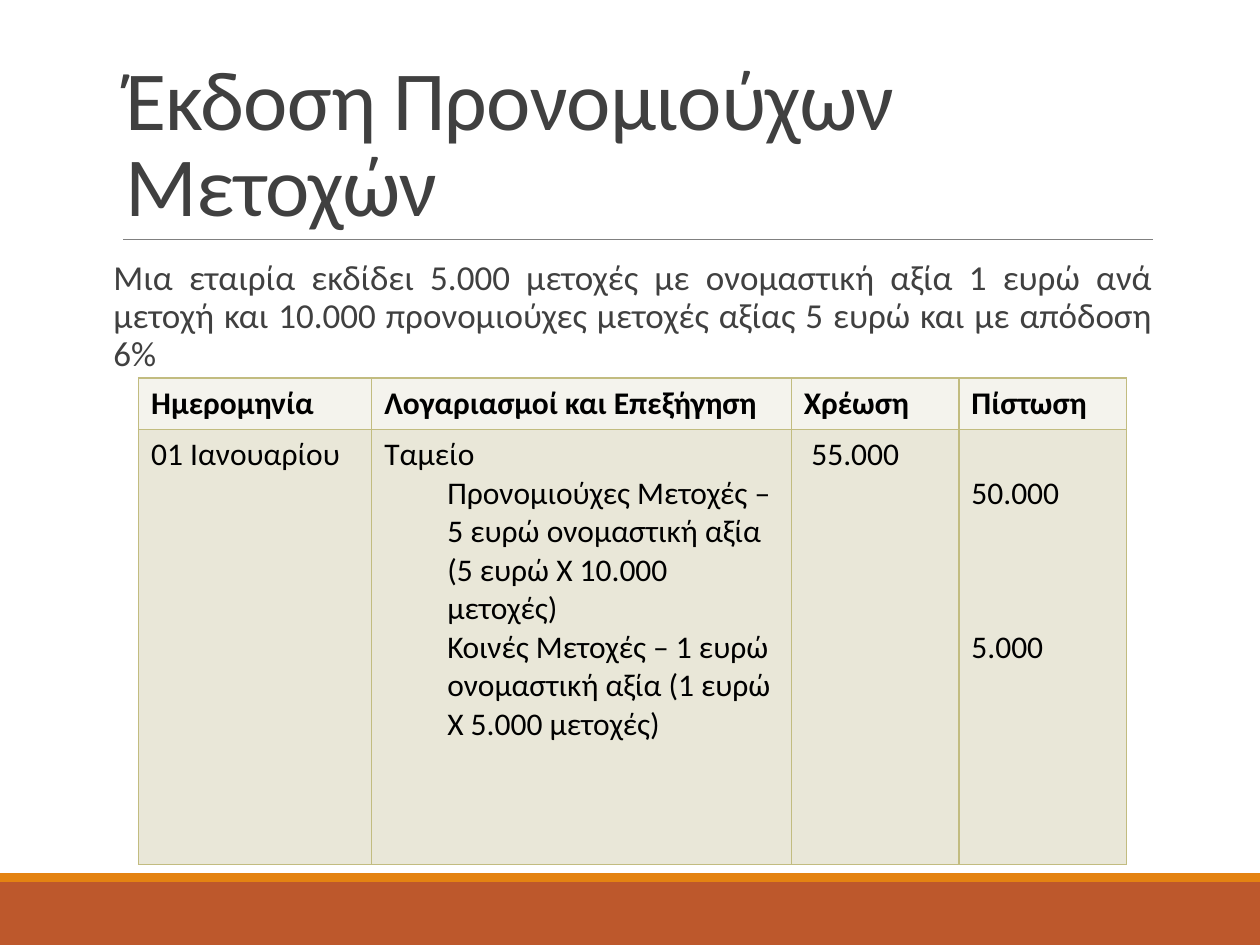
from lxml import etree
from pptx import Presentation
from pptx import util as u
from pptx.dml.color import RGBColor
from pptx.enum import shapes, text
from pptx.oxml.ns import qn

In = u.Inches
GREY, BLACK, EDGE = "404040", "000000", "C2BC80"


def color(code):
    return RGBColor.from_string(code)


def write(par, words, size=18, ink=BLACK, bold=False, align=None,
          line=None, before=0, after=0, track=None):
    """Put formatted words into a paragraph."""
    par.alignment = align
    par.line_spacing = line
    par.space_before, par.space_after = u.Pt(before), u.Pt(after)
    run = par.add_run()
    run.text = words
    font = run.font
    font.name, font.size, font.bold = "Calibri", u.Pt(size), bold
    font.color.rgb = color(ink)
    if track is not None:
        run._r.get_or_add_rPr().set("spc", str(int(track * 100)))


def label(slide, box, words, side=0.1, anchor=text.MSO_ANCHOR.TOP, **look):
    frame = slide.shapes.add_textbox(*map(In, box)).text_frame
    frame.word_wrap = True
    frame.vertical_anchor = anchor
    frame.margin_left = frame.margin_right = In(side)
    write(frame.paragraphs[0], words, **look)


def band(slide, box, fill):
    bar = slide.shapes.add_shape(shapes.MSO_SHAPE.RECTANGLE, *map(In, box))
    bar.shadow.inherit = False
    bar.fill.solid()
    bar.fill.fore_color.rgb = color(fill)
    bar.line.fill.background()


def rule(slide, left, right, top):
    line = slide.shapes.add_connector(
        shapes.MSO_CONNECTOR.STRAIGHT, In(left), In(top), In(right), In(top))
    line.line.color.rgb = color("808080")
    line.line.width = u.Pt(0.5)
    etree.SubElement(line._element.spPr, qn("a:effectLst"))


def paint(cell, fill):
    """Draw the cell borders, then fill the cell."""
    props = cell._tc.get_or_add_tcPr()
    for side in ("lnL", "lnR", "lnT", "lnB"):
        edge = etree.SubElement(props, qn("a:" + side), w=str(u.Pt(1)))
        solid = etree.SubElement(edge, qn("a:solidFill"))
        etree.SubElement(solid, qn("a:srgbClr"), val=EDGE)
    cell.fill.solid()
    cell.fill.fore_color.rgb = color(fill)


def ledger(slide, box):
    """Journal entry: each body cell lists (words, indent, space before)."""
    heads = ["Ημερομηνία", "Λογαριασμοί και Επεξήγηση", "Χρέωση", "Πίστωση"]
    entry = [
        [("01 Ιανουαρίου", 0, 0)],
        [("Ταμείο", 0, 0),
         ("Προνομιούχες Μετοχές – 5 ευρώ ονομαστική αξία "
          "(5 ευρώ Χ 10.000 μετοχές)", 0.5, 0),
         ("Κοινές Μετοχές – 1 ευρώ ονομαστική αξία "
          "(1 ευρώ Χ 5.000 μετοχές)", 0.5, 0)],
        [("55.000", 0, 0)],
        [("50.000", 0, 0), ("5.000", 0, 66)],
    ]
    grid = slide.shapes.add_table(2, 4, *map(In, box)).table
    for col, wide in zip(grid.columns, (1.85, 3.33, 1.33, 1.33)):
        col.width = In(wide)
    for row, high in zip(grid.rows, (0.41, box[3] - 0.41)):
        row.height = In(high)

    for i, (head, parts) in enumerate(zip(heads, entry)):
        top, body = grid.cell(0, i), grid.cell(1, i)
        paint(top, "F4F3ED")
        paint(body, "E9E7D8")
        write(top.text_frame.paragraphs[0], head, bold=True)
        frame = body.text_frame
        for j, (words, indent, gap) in enumerate(parts):
            par = frame.add_paragraph() if j else frame.paragraphs[0]
            write(par, words, before=gap)
            if indent:
                props = par._p.get_or_add_pPr()
                props.set("marL", str(In(indent)))
                props.set("indent", "0")
    # Amounts: debit slightly inset, credit starts one line down
    grid.cell(1, 2).margin_left = In(0.16)
    grid.cell(1, 3).margin_top = In(0.355)


def main():
    deck = Presentation()
    deck.slide_width, deck.slide_height = In(10), In(7.5)
    slide = deck.slides.add_slide(deck.slide_layouts[6])

    # Footer bands and title rule
    band(slide, (0, 7, 10, 0.5), "BD582C")
    band(slide, (0, 6.93, 10, 0.07), "E48312")
    rule(slide, 0.98, 9.15, 1.9)

    # Title and question
    label(slide, (0.9, 0.31, 8.25, 1.59), "Έκδοση Προνομιούχων Μετοχών",
          anchor=text.MSO_ANCHOR.BOTTOM, size=48, ink=GREY, line=0.85,
          track=-0.5)
    label(slide, (0.9, 2.02, 8.25, 4.4),
          "Μια εταιρία εκδίδει 5.000 μετοχές με ονομαστική αξία 1 ευρώ ανά "
          "μετοχή και 10.000 προνομιούχες μετοχές αξίας 5 ευρώ και με "
          "απόδοση 6%",
          side=0, size=20, ink=GREY, align=text.PP_ALIGN.JUSTIFY,
          line=0.9, before=12, after=2)

    # Journal entry
    ledger(slide, (1.1, 3, 7.84, 3.86))
    deck.save("out.pptx")


if __name__ == "__main__":
    main()
